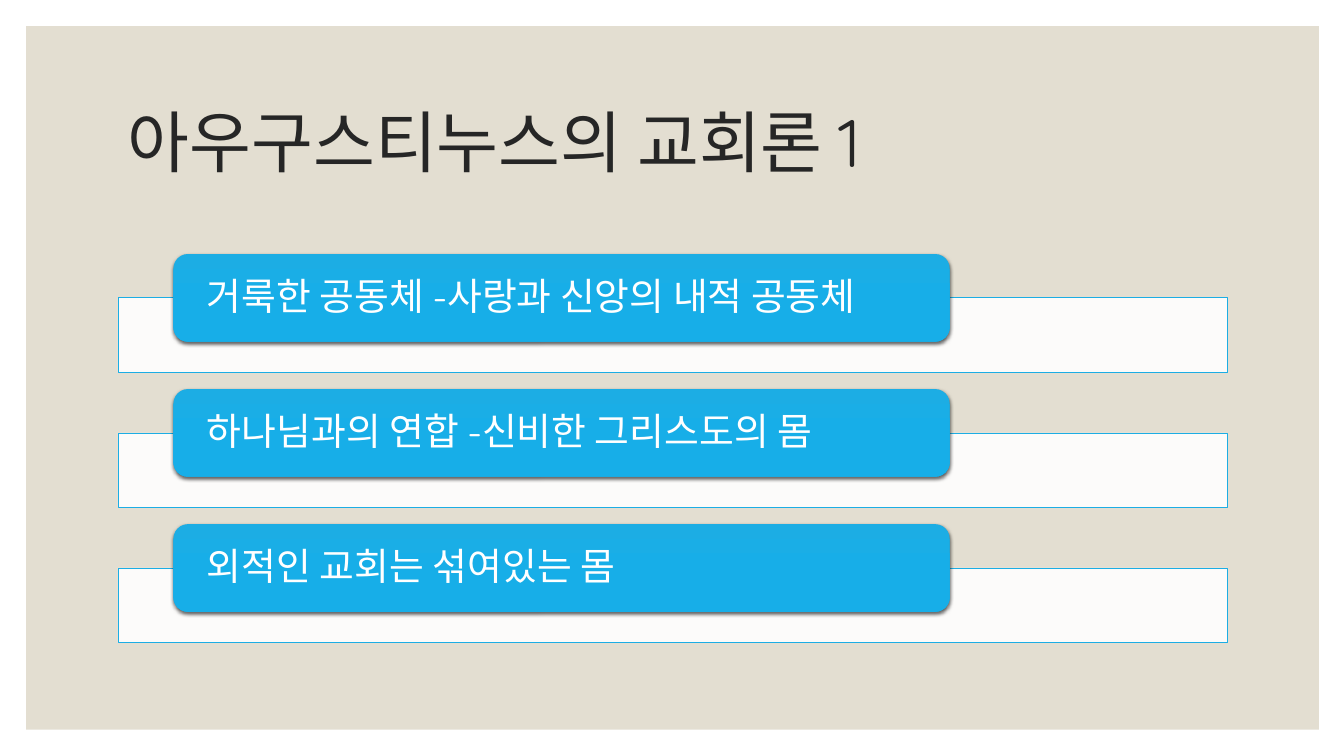
from dataclasses import dataclass

from lxml import etree
from pptx import Presentation
from pptx.dml.color import RGBColor
from pptx.enum.shapes import MSO_SHAPE
from pptx.enum.text import MSO_ANCHOR, PP_ALIGN
from pptx.oxml.ns import qn
from pptx.util import Inches, Pt

RECTANGLE = MSO_SHAPE.RECTANGLE
ROUNDED = MSO_SHAPE.ROUNDED_RECTANGLE
MIDDLE = MSO_ANCHOR.MIDDLE
LEFT = PP_ALIGN.LEFT


@dataclass(frozen=True)
class Theme:
    font: str = "Quicksand"
    title_size: int = 48
    label_size: int = 27
    panel: str = "E3DED1"
    ink: str = "262626"
    white: str = "FFFFFF"
    accent: str = "1CADE4"
    accent_end: str = "17AEE8"
    shadow: str = "000000"


THEME = Theme()
TITLE = "아우구스티누스의 교회론 1"
POINTS = [
    "거룩한 공동체 -사랑과 신앙의 내적 공동체",
    "하나님과의 연합 -신비한 그리스도의 몸",
    "외적인 교회는 섞여있는 몸",
]


def rgb(color):
    return RGBColor.from_string(color)


def add_block(slide, kind, left, top, width, height):
    block = slide.shapes.add_shape(
        kind, Inches(left), Inches(top), Inches(width), Inches(height))
    block.shadow.inherit = False
    block.line.fill.background()
    return block


def fill_solid(block, color, opacity=100):
    block.fill.solid()
    block.fill.fore_color.rgb = rgb(color)
    if opacity < 100:
        tint = block.fill._xPr.find(qn("a:solidFill"))[0]
        etree.SubElement(tint, qn("a:alpha"), val=str(opacity * 1000))


def fill_gradient(block, start, end):
    block.fill.gradient()
    block.fill.gradient_angle = 270
    first, last = block.fill.gradient_stops
    first.color.rgb = rgb(start)
    last.color.rgb = rgb(end)
    last.position = 0.5


def cast_shadow(block):
    effects = block._element.spPr.find(qn("a:effectLst"))
    shadow = etree.SubElement(
        effects, qn("a:outerShdw"), blurRad=str(Pt(3)), dist=str(Pt(1)),
        dir="5400000", algn="ctr", rotWithShape="0")
    color = etree.SubElement(shadow, qn("a:srgbClr"), val=THEME.shadow)
    etree.SubElement(color, qn("a:alpha"), val="63000")


def write(frame, words, size, color, inset, margin):
    frame.word_wrap = True
    frame.vertical_anchor = MIDDLE
    frame.margin_left = frame.margin_right = Inches(inset)
    frame.margin_top = frame.margin_bottom = Inches(margin)
    frame.text = words
    paragraph = frame.paragraphs[0]
    paragraph.alignment = LEFT
    paragraph.line_spacing = 0.9
    font = paragraph.runs[0].font
    font.name = THEME.font
    font.size = Pt(size)
    font.color.rgb = rgb(color)


def add_panel(slide, left, top, width, height):
    panel = add_block(slide, RECTANGLE, left, top, width, height)
    fill_solid(panel, THEME.panel)


def add_title(slide, words, left, top, width, height):
    title = slide.shapes.add_textbox(
        Inches(left), Inches(top), Inches(width), Inches(height))
    write(title.text_frame, words, THEME.title_size, THEME.ink, 0.1, 0.05)


def add_point(slide, words, left, top, width):
    label_height = 0.87
    bar = add_block(slide, RECTANGLE, left, top + label_height / 2, width, 0.74)
    fill_solid(bar, THEME.white, opacity=90)
    bar.line.color.rgb = rgb(THEME.accent)
    bar.line.width = Pt(0.5)

    label = add_block(
        slide, ROUNDED, left + width * 0.05, top, width * 0.7, label_height)
    fill_gradient(label, THEME.accent, THEME.accent_end)
    cast_shadow(label)
    write(label.text_frame, words, THEME.label_size, THEME.white, 0.29, 0.04)


def add_points(slide, points, left, top, width, pitch):
    for row, words in enumerate(points):
        add_point(slide, words, left, top + row * pitch, width)


def main():
    deck = Presentation()
    deck.slide_width = Inches(13.33)
    deck.slide_height = Inches(7.5)
    slide = deck.slides.add_slide(deck.slide_layouts[6])
    add_panel(slide, 0.26, 0.26, 12.82, 6.98)
    add_title(slide, TITLE, 1.17, 0.7, 11, 1.5)
    add_points(slide, POINTS, 1.17, 2.52, 11, pitch=1.34)
    deck.save("out.pptx")


if __name__ == "__main__":
    main()
